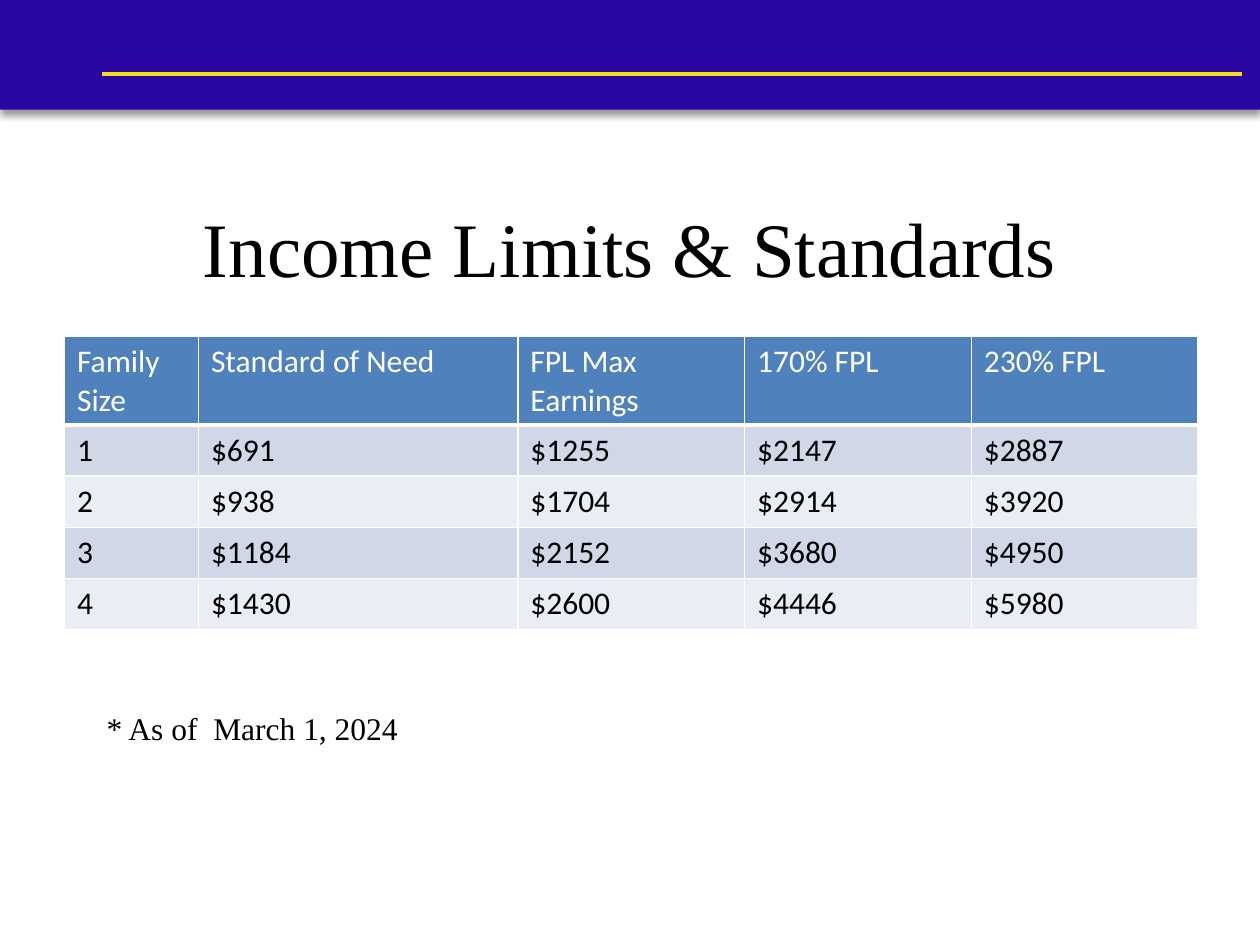
from dataclasses import dataclass

from lxml.etree import SubElement
from pptx import Presentation
from pptx.dml.color import RGBColor
from pptx.enum.shapes import MSO_CONNECTOR, MSO_SHAPE
from pptx.enum.text import MSO_ANCHOR, PP_ALIGN
from pptx.oxml import parse_xml
from pptx.oxml.ns import nsdecls, qn
from pptx.util import Cm, Pt


@dataclass(frozen=True)
class Theme:
    band: str = "2906A2"
    rule: str = "F0E018"
    header: str = "4F81BD"
    odd_row: str = "D0D8E8"
    even_row: str = "E9EDF4"
    light: str = "FFFFFF"
    dark: str = "000000"
    serif: str = "Times New Roman"
    sans: str = "Calibri"
    title_size: int = 44
    body_size: int = 18


theme = Theme()


def write_text(frame, text, *, font, size, color, align=PP_ALIGN.LEFT):
    paragraph = frame.paragraphs[0]
    paragraph.alignment = align
    run = paragraph.add_run()
    run.text = text
    run.font.name = font
    run.font.size = Pt(size)
    run.font.bold = False
    run.font.color.rgb = RGBColor.from_string(color)


def add_border(cell, side, width):
    cell._tc.get_or_add_tcPr().append(parse_xml(
        f'<a:ln{side} {nsdecls("a")} w="{Pt(width)}"><a:solidFill>'
        f'<a:srgbClr val="{theme.light}"/></a:solidFill></a:ln{side}>'
    ))


presentation = Presentation()
presentation.slide_width = Cm(25.4)
presentation.slide_height = Cm(19.05)
slide = presentation.slides.add_slide(presentation.slide_layouts[6])

band = slide.shapes.add_shape(MSO_SHAPE.RECTANGLE, 0, 0, Cm(25.4), Cm(2.21))
band.shadow.inherit = False
band.fill.solid()
band.fill.fore_color.rgb = RGBColor.from_string(theme.band)
band.line.fill.background()
effects = band._element.spPr.find(qn("a:effectLst"))
effects.append(parse_xml(
    f'<a:outerShdw {nsdecls("a")} blurRad="{Pt(4)}" dist="{Pt(3)}" dir="5400000" '
    f'rotWithShape="0"><a:srgbClr val="{theme.dark}"><a:alpha val="40000"/>'
    '</a:srgbClr></a:outerShdw>'
))

rule = slide.shapes.add_connector(
    MSO_CONNECTOR.STRAIGHT, Cm(2.06), Cm(1.49), Cm(25.04), Cm(1.49)
)
rule.line.color.rgb = RGBColor.from_string(theme.rule)
rule.line.width = Pt(2)
SubElement(rule._element.spPr, qn("a:effectLst"))

title = slide.shapes.add_textbox(Cm(1.27), Cm(3.6), Cm(22.86), Cm(2.74))
title.text_frame.word_wrap = True
title.text_frame.vertical_anchor = MSO_ANCHOR.MIDDLE
write_text(title.text_frame, "Income Limits & Standards", font=theme.serif,
           size=theme.title_size, color=theme.dark, align=PP_ALIGN.CENTER)

rows = [
    ["Family Size", "Standard of Need", "FPL Max Earnings", "170% FPL", "230% FPL"],
    ["1", "$691", "$1255", "$2147", "$2887"],
    ["2", "$938", "$1704", "$2914", "$3920"],
    ["3", "$1184", "$2152", "$3680", "$4950"],
    ["4", "$1430", "$2600", "$4446", "$5980"],
]
column_widths = [2.7, 6.44, 4.57, 4.57, 4.57]
row_heights = [1.79] + [1.03] * 4

table = slide.shapes.add_table(
    len(rows), len(column_widths), Cm(1.3), Cm(6.78),
    Cm(sum(column_widths)), Cm(sum(row_heights)),
).table
for column, width in zip(table.columns, column_widths):
    column.width = Cm(width)

for row_index, values in enumerate(rows):
    table.rows[row_index].height = Cm(row_heights[row_index])
    is_header = row_index == 0
    band_color = theme.odd_row if row_index % 2 else theme.even_row
    for column_index, value in enumerate(values):
        cell = table.cell(row_index, column_index)
        for side in "LRTB":
            add_border(cell, side, 3 if is_header and side == "B" else 1)
        cell.fill.solid()
        cell.fill.fore_color.rgb = RGBColor.from_string(
            theme.header if is_header else band_color
        )
        write_text(cell.text_frame, value, font=theme.sans, size=theme.body_size,
                   color=theme.light if is_header else theme.dark)

note = slide.shapes.add_textbox(Cm(1.9), Cm(14.17), Cm(6.38), Cm(1.02))
note.text_frame.word_wrap = False
write_text(note.text_frame, "* As of  March 1, 2024", font=theme.serif,
           size=theme.body_size, color=theme.dark)

presentation.save("out.pptx")
